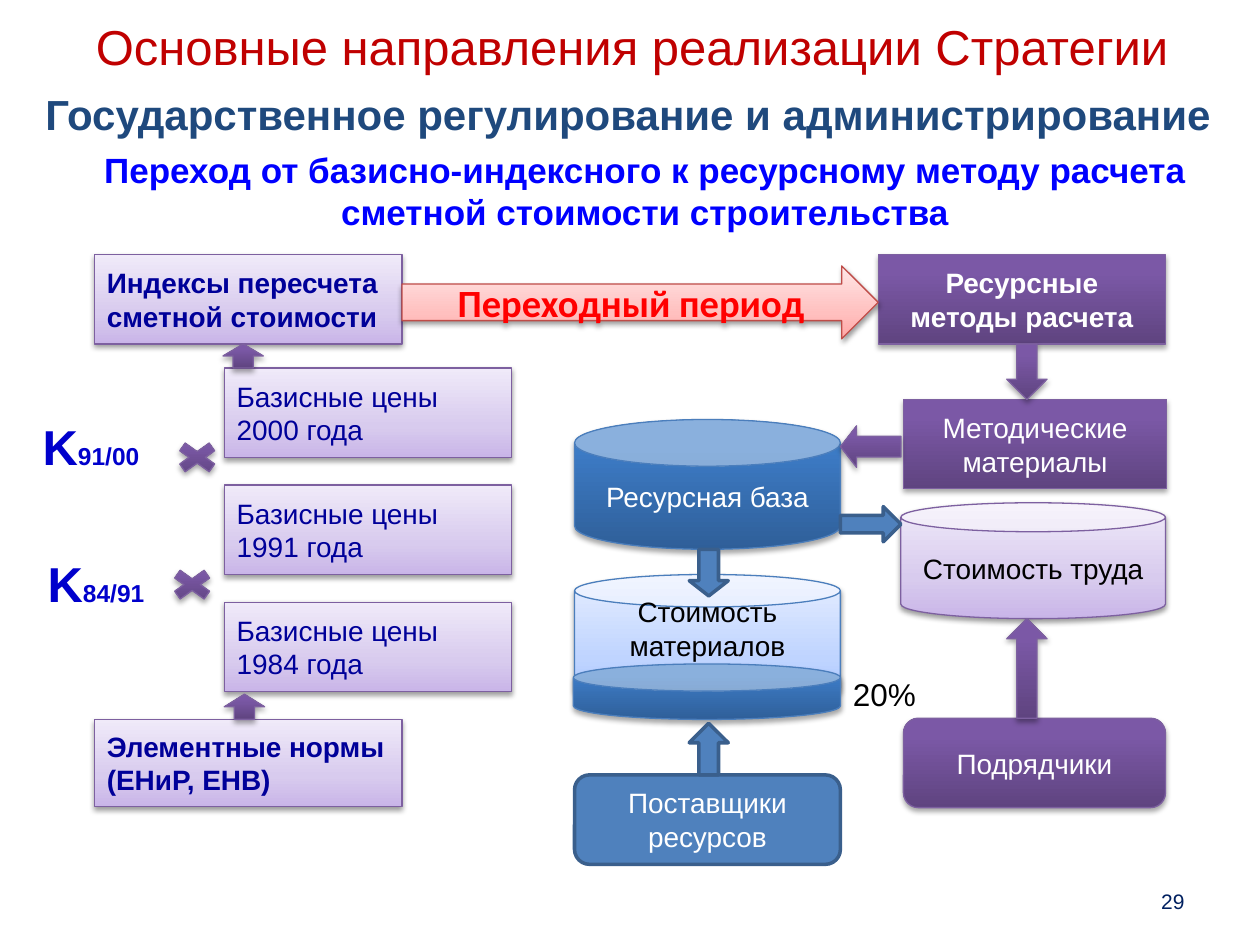
from dataclasses import dataclass

from lxml import etree
from pptx import Presentation
from pptx import util as u
from pptx.dml.color import RGBColor
from pptx.enum import shapes, text
from pptx.oxml.ns import qn

I = u.Inches
G = shapes.MSO_SHAPE
AL = text.PP_ALIGN
MIDDLE = text.MSO_ANCHOR.MIDDLE


@dataclass(frozen=True)
class Look:
    stops: tuple
    line: str
    color: str
    width: float = 0.75
    shadow: tuple = ()


class Theme:
    font, alt_font = "Arial", "Calibri"
    heading, subtitle, topic = 28, 24, 20
    label, period, percent, page, index = 16, 22, 18, 12, 14
    red, navy, blue, page_blue = "C00000", "1F497D", "0000FF", "002060"
    factor, black, white, ink = "0000CC", "000000", "FFFFFF", "000099"
    soft, strong = (38, 1.6), (35, 1.8)
    lilac = Look(((0, "C9B5E8"), (35, "D8CBEE"), (100, "F0EAF9")), "7D60A0", ink, shadow=soft)
    purple = Look(((0, "5F4480"), (80, "7B58A6"), (100, "7C57A8")), "7D60A0", white, shadow=strong)
    sky = Look(((0, "A4C4FF"), (35, "BFD4FF"), (100, "E6EEFF")), "4B7EBC", black, shadow=soft)
    deep = Look(((0, "2F5F99"), (80, "3D7CC7"), (100, "3A7CCB")), "4B7EBC", white, shadow=strong)
    pink = Look(((0, "FFA6A5"), (35, "FFC0BF"), (100, "FFE7E7")), "BF4C48", "FF0000", shadow=soft)
    flat = Look(((0, "4F81BD"),), "3A5F8C", white, width=2)


T = Theme


def rgb(value):
    return RGBColor.from_string(value)


def set_font(font, size, color, bold=False, name=T.font):
    font.size, font.bold, font.name = u.Pt(size), bold, name
    font.color.rgb = rgb(color)


def write(tf, content, size, color, bold=False, align=AL.CENTER, name=T.font):
    tf.word_wrap = True
    p = tf.paragraphs[0]
    p.text = content
    p.alignment = align
    set_font(p.font, size, color, bold, name)


def fill_shape(sp, stops):
    if len(stops) == 1:
        sp.fill.solid()
        sp.fill.fore_color.rgb = rgb(stops[0][1])
        return
    sp.fill.gradient()
    sp.fill.gradient_angle = 90
    stop_list = sp._element.spPr.find(".//" + qn("a:gsLst"))
    for old in list(stop_list):
        stop_list.remove(old)
    for pos, color in stops:
        stop = etree.SubElement(stop_list, qn("a:gs"), pos=str(pos * 1000))
        etree.SubElement(stop, qn("a:srgbClr"), val=color)


def add_shadow(sp, alpha, distance):
    effects = sp._element.spPr.find(qn("a:effectLst"))
    outer = etree.SubElement(
        effects, qn("a:outerShdw"), blurRad=str(u.Pt(3.1)),
        dist=str(u.Pt(distance)), dir="5400000", rotWithShape="0")
    color = etree.SubElement(outer, qn("a:srgbClr"), val=T.black)
    etree.SubElement(color, qn("a:alpha"), val=str(alpha * 1000))


def add_figure(s, kind, box, look, adj=()):
    sp = s.shapes.add_shape(kind, *map(I, box))
    for i, value in enumerate(adj):
        sp.adjustments[i] = value
    fill_shape(sp, look.stops)
    sp.line.color.rgb = rgb(look.line)
    sp.line.width = u.Pt(look.width)
    sp.shadow.inherit = False
    if look.shadow:
        add_shadow(sp, *look.shadow)
    return sp


def add_block(s, kind, box, look, content, bold=False, align=AL.CENTER,
              color=None, size=T.label, name=T.font, adj=()):
    sp = add_figure(s, kind, box, look, adj)
    sp.text_frame.vertical_anchor = MIDDLE
    write(sp.text_frame, content, size, color or look.color, bold, align, name)
    return sp


def add_label(s, box, content, size, color, bold=False, align=AL.CENTER, anchor=text.MSO_ANCHOR.TOP):
    tf = s.shapes.add_textbox(*map(I, box)).text_frame
    tf.vertical_anchor = anchor
    write(tf, content, size, color, bold, align)
    return tf


def add_factor(s, left, top, years, cross_left, cross_top):
    tf = add_label(s, (left, top, 1.02, 0.57), "K", T.heading, T.factor, True, AL.LEFT)
    r = tf.paragraphs[0].add_run()
    r.text = years
    r.font.size = u.Pt(T.index)
    add_figure(s, G.MATH_MULTIPLY, (cross_left, cross_top, 0.45, 0.32), T.purple)


def add_headings(s):
    title = s.shapes.title
    title.left, title.top, title.width, title.height = map(I, (0.1, 0.64, 9.77, 0.52))
    tf = title.text_frame
    tf.auto_size = text.MSO_AUTO_SIZE.NONE
    tf.vertical_anchor = MIDDLE
    write(tf, "Государственное регулирование и администрирование", T.subtitle, T.navy, True)
    add_label(s, (0.2, 0, 9.63, 0.73), "Основные направления реализации Стратегии",
              T.heading, T.red, anchor=MIDDLE)
    add_label(s, (0.24, 1.13, 9.76, 0.77),
              "Переход от базисно-индексного к ресурсному методу расчета сметной стоимости строительства",
              T.topic, T.blue, True)
    add_label(s, (7.17, 6.95, 2.33, 0.4), "29", T.page, T.page_blue, align=AL.RIGHT, anchor=MIDDLE)


def add_index_method(s):
    for top, height, content in ((2.02, 0.71, "Индексы пересчета сметной стоимости"),
                                 (5.71, 0.69, "Элементные нормы (ЕНиР, ЕНВ)")):
        add_block(s, G.RECTANGLE, (0.75, top, 2.44, height), T.lilac, content, True, AL.LEFT)
    for i, year in enumerate((2000, 1991, 1984)):
        add_block(s, G.RECTANGLE, (1.78, 2.92 + 0.93 * i, 2.28, 0.71), T.lilac,
                  f"Базисные цены {year} года", align=AL.LEFT)
    add_factor(s, 0.24, 3.26, "91/00", 1.34, 3.47)
    add_factor(s, 0.28, 4.34, "84/91", 1.3, 4.48)


def add_resource_method(s):
    add_block(s, G.RECTANGLE, (6.97, 2.02, 2.28, 0.71), T.purple, "Ресурсные методы расчета", True)
    add_block(s, G.RECTANGLE, (7.17, 3.17, 2.09, 0.71), T.purple, "Методические материалы")
    materials = add_block(s, G.CAN, (4.56, 4.56, 2.11, 1.03), T.sky, "Стоимость материалов")
    materials.text_frame.margin_bottom = I(0.35)
    add_figure(s, G.CAN, (4.55, 5.27, 2.12, 0.44), T.deep, (0.49,))
    add_block(s, G.CAN, (7.15, 3.99, 2.1, 0.92), T.lilac, "Стоимость труда", color=T.black)
    add_block(s, G.CAN, (4.56, 3.33, 2.11, 1.03), T.deep, "Ресурсная база", adj=(0.36,))
    add_block(s, G.ROUNDED_RECTANGLE, (4.56, 6.15, 2.11, 0.71), T.flat, "Поставщики ресурсов")
    add_block(s, G.ROUNDED_RECTANGLE, (7.17, 5.7, 2.08, 0.71), T.purple, "Подрядчики")
    add_label(s, (6.67, 5.31, 0.79, 0.4), "20%", T.percent, T.black, align=AL.LEFT)


def add_arrows(s):
    add_block(s, G.RIGHT_ARROW, (3.19, 2.11, 3.78, 0.58), T.pink, "Переходный период",
              True, size=T.period, name=T.alt_font)
    for kind, box, look, adj in (
        (G.RIGHT_ARROW, (6.67, 4.02, 0.48, 0.28), T.flat, ()),
        (G.DOWN_ARROW, (5.47, 4.36, 0.31, 0.37), T.flat, (0.5, 0.39)),
        (G.UP_ARROW, (5.47, 5.74, 0.31, 0.41), T.flat, ()),
        (G.DOWN_ARROW, (7.99, 2.73, 0.32, 0.44), T.purple, ()),
        (G.LEFT_ARROW, (6.67, 3.38, 0.48, 0.33), T.purple, (0.5, 0.39)),
        (G.UP_ARROW, (7.99, 4.91, 0.32, 0.79), T.purple, ()),
        (G.UP_ARROW, (1.77, 2.73, 0.32, 0.19), T.purple, ()),
        (G.UP_ARROW, (1.78, 5.51, 0.32, 0.2), T.purple, ()),
    ):
        add_figure(s, kind, box, look, adj)


def main():
    prs = Presentation()
    prs.slide_width, prs.slide_height = I(10), I(7.5)
    s = prs.slides.add_slide(prs.slide_layouts[5])
    add_headings(s)
    add_index_method(s)
    add_resource_method(s)
    add_arrows(s)
    prs.save("out.pptx")


if __name__ == "__main__":
    main()
